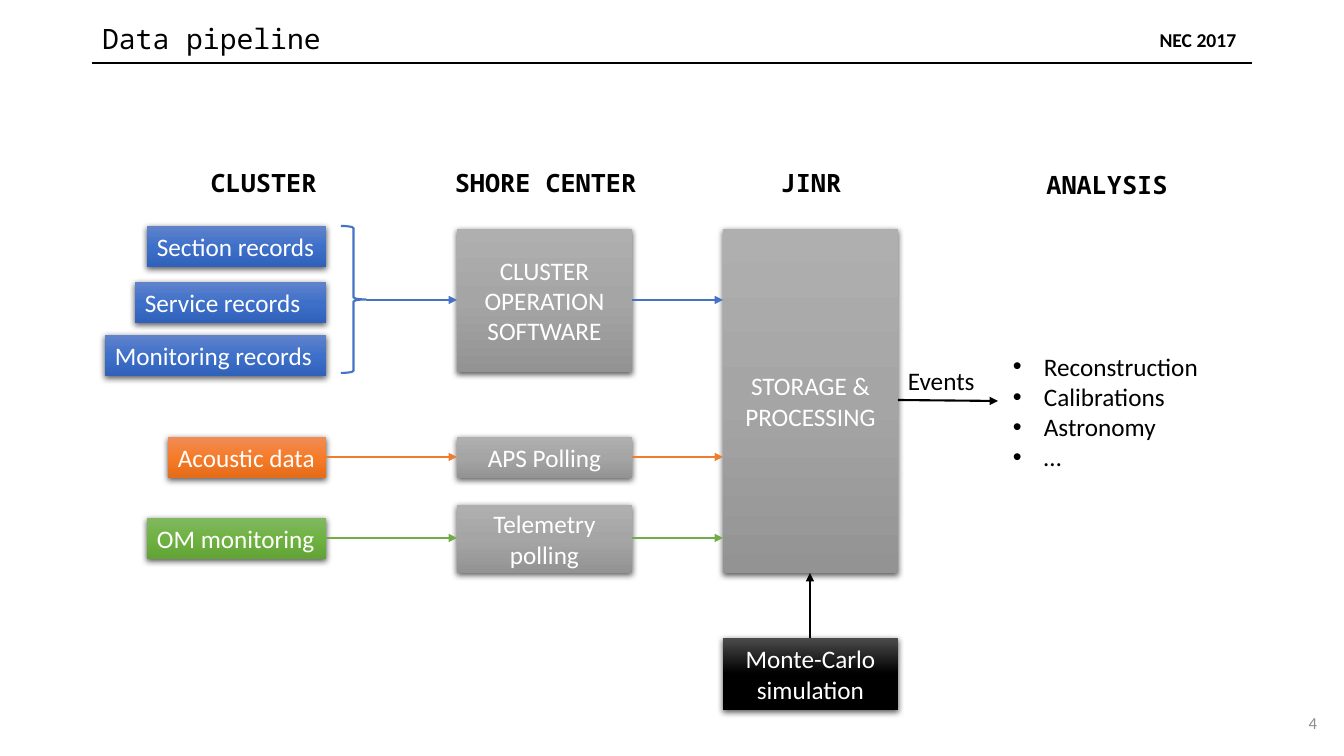
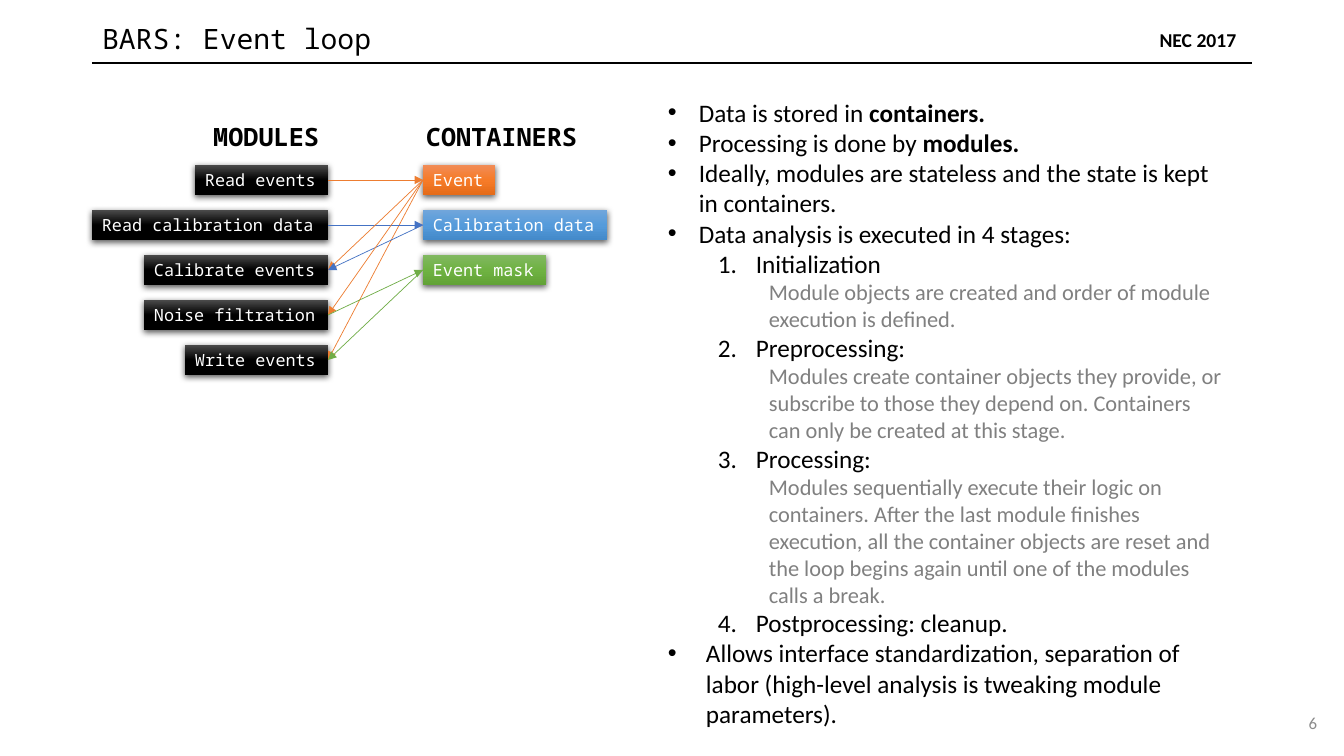
"""Build two slides on a data pipeline and its event loop."""
from pptx import Presentation
from pptx import util as u
from pptx.dml.color import RGBColor
from pptx.enum import shapes, text
from pptx.oxml import parse_xml
from pptx.oxml.ns import nsdecls, qn

PX = 12192000 / 1344
BODY, MONO = "Calibri", "Noto Sans Mono"
BLACK = RGBColor(0x00, 0x00, 0x00)
WHITE = RGBColor(0xFF, 0xFF, 0xFF)
GRAY = RGBColor(0x80, 0x80, 0x80)
NUMBER_GRAY = RGBColor(0x8C, 0x8C, 0x8C)
BLUE = RGBColor(0x44, 0x72, 0xC4)
ORANGE = RGBColor(0xED, 0x7D, 0x31)
GREEN = RGBColor(0x70, 0xAD, 0x47)
BLUE_FADE = [RGBColor(0x61, 0x83, 0xCB), RGBColor(0x3E, 0x70, 0xCA), RGBColor(0x30, 0x62, 0xBB)]
SKY_FADE = [RGBColor(0x71, 0xA6, 0xDB), RGBColor(0x55, 0x9B, 0xDB), RGBColor(0x44, 0x8A, 0xCA)]
ORANGE_FADE = [RGBColor(0xF1, 0x8C, 0x57), RGBColor(0xF6, 0x7B, 0x28), RGBColor(0xE5, 0x6C, 0x19)]
GREEN_FADE = [RGBColor(0x81, 0xB8, 0x61), RGBColor(0x6F, 0xB2, 0x42), RGBColor(0x62, 0xA3, 0x36)]
GRAY_FADE = [RGBColor(0xAF, 0xAF, 0xAF), RGBColor(0xA5, 0xA5, 0xA5), RGBColor(0x93, 0x93, 0x93)]
BLACK_FADE = [RGBColor(0x4B, 0x4B, 0x4B), BLACK, BLACK]
LEFT, CENTER, RIGHT = text.PP_ALIGN.LEFT, text.PP_ALIGN.CENTER, text.PP_ALIGN.RIGHT


def add_box(page, frame, words, size=18, font=BODY, color=None, fade=None,
            align=LEFT, wrap=False, bold=False):
    place = [u.Emu(round(length * PX)) for length in frame]
    if fade:
        box = page.shapes.add_shape(shapes.MSO_SHAPE.RECTANGLE, *place)
        stops = "".join(f'<a:gs pos="{i * 50000}"><a:srgbClr val="{stop}"/></a:gs>'
                        for i, stop in enumerate(fade))
        looks = parse_xml(
            f'<a:looks {nsdecls("a")}><a:gradFill><a:gsLst>{stops}</a:gsLst>'
            '<a:lin ang="5400000" scaled="0"/></a:gradFill><a:ln><a:noFill/></a:ln>'
            '<a:effectLst><a:outerShdw blurRad="57150" dist="19050" dir="5400000" algn="ctr" '
            'rotWithShape="0"><a:srgbClr val="000000"><a:alpha val="63000"/></a:srgbClr>'
            '</a:outerShdw></a:effectLst></a:looks>')
        box._element.spPr.extend(list(looks))
    else:
        box = page.shapes.add_textbox(*place)
    box.text_frame.text = words
    box.text_frame.word_wrap = wrap
    box.text_frame.vertical_anchor = text.MSO_ANCHOR.MIDDLE
    for para in box.text_frame.paragraphs:
        para.alignment = align
        for span in para.runs:
            span.font.size = u.Pt(size)
            span.font.name = font
            span.font.bold = bold
            span.font.color.rgb = color or (WHITE if fade else BLACK)
    return box


def add_line(page, start, end, color, width=1.5, arrow=True):
    ends = [u.Emu(round(length * PX)) for length in (*start, *end)]
    line = page.shapes.add_connector(shapes.MSO_CONNECTOR.STRAIGHT, *ends)
    line.line.color.rgb = color
    line.line.width = u.Pt(width)
    if arrow:
        stroke = line._element.spPr.find(qn("a:ln"))
        stroke.append(parse_xml(f'<a:tailEnd {nsdecls("a")} type="triangle"/>'))
    line._element.spPr.append(parse_xml(f'<a:effectLst {nsdecls("a")}/>'))
    return line


deck = Presentation()
deck.slide_width, deck.slide_height = u.Emu(round(1344 * PX)), u.Emu(round(756 * PX))

pages = []
for heading, width, number in [("Data pipeline", 580, "4"), ("BARS: Event loop", 1039, "6")]:
    page = deck.slides.add_slide(deck.slide_layouts[5])
    pages.append(page)
    add_line(page, (92, 63), (1252, 63), BLACK, 1.25, arrow=False)
    title = page.shapes.title
    title.left, title.top, title.width, title.height = [
        u.Emu(round(length * PX)) for length in (92, 17, width, 46)]
    title.text_frame.text = heading
    title.text_frame.auto_size = text.MSO_AUTO_SIZE.NONE
    title.text_frame.vertical_anchor = text.MSO_ANCHOR.MIDDLE
    para = title.text_frame.paragraphs[0]
    para.alignment, para.line_spacing = LEFT, 0.9
    font = para.runs[0].font
    font.size, font.name, font.color.rgb = u.Pt(20), MONO, BLACK
    add_box(page, (1145, 17, 106, 46), "NEC 2017", 14, align=CENTER, bold=True)
    add_box(page, (1274, 703, 53, 40), number, 12, color=NUMBER_GRAY, align=RIGHT, wrap=True)
pipeline, event_loop = pages

for left, top, width, words in [
    (200, 162, 127, "CLUSTER"),
    (444, 162, 203, "SHORE CENTER"),
    (770, 162, 82, "JINR"),
    (1036, 164, 142, "ANALYSIS"),
]:
    add_box(pipeline, (left, top, width, 41), words, font=MONO, align=CENTER, bold=True)

for top, width, words, fade, wrap in [
    (226, 179, "Section records", BLUE_FADE, False),
    (282, 191, "Service records", BLUE_FADE, True),
    (335, 221, "Monitoring records", BLUE_FADE, True),
    (437, 158, "Acoustic data", ORANGE_FADE, False),
    (518, 179, "OM monitoring", GREEN_FADE, False),
]:
    add_box(pipeline, (326 - width, top, width, 41), words, fade=fade, wrap=wrap)

for left, top, height, words, fade in [
    (457, 229, 143, "CLUSTER\nOPERATION\nSOFTWARE", GRAY_FADE),
    (457, 437, 41, "APS Polling", GRAY_FADE),
    (457, 505, 68, "Telemetry polling", GRAY_FADE),
    (723, 229, 344, "STORAGE &\nPROCESSING", GRAY_FADE),
    (723, 638, 72, "Monte-Carlo simulation", BLACK_FADE),
]:
    add_box(pipeline, (left, top, 175, height), words, fade=fade, align=CENTER, wrap=True)

brace = pipeline.shapes.add_shape(
    shapes.MSO_SHAPE.RIGHT_BRACE,
    *[u.Emu(round(length * PX)) for length in (341, 226, 25, 147)])
brace.shadow.inherit = False
brace.fill.background()
brace.line.color.rgb = BLUE
brace.line.width = u.Pt(1.5)

for start, y, color in [(366, 300, BLUE), (326, 457, ORANGE), (326, 538, GREEN)]:
    add_line(pipeline, (start, y), (457, y), color)
    add_line(pipeline, (632, y), (723, y), color)
add_line(pipeline, (810, 638), (810, 573), BLACK)
add_line(pipeline, (898, 400), (998, 401), BLACK)
add_box(pipeline, (898, 360, 88, 41), "Events")

ROW_TOP, ROW_STEP, ROW_HEIGHT = 165, 45, 30
MODULE_RIGHT, CONTAINER_LEFT = 328, 423
add_box(event_loop, (202, 116, 127, 41), "MODULES", font=MONO, align=RIGHT, bold=True)
add_box(event_loop, (416, 116, 172, 41), "CONTAINERS", font=MONO, bold=True)

modules = [
    add_box(event_loop, (MODULE_RIGHT - width, ROW_TOP + row * ROW_STEP, width, ROW_HEIGHT),
            words, 12, MONO, fade=BLACK_FADE)
    for row, (width, words) in enumerate([
        (133, "Read events"),
        (236, "Read calibration data"),
        (184, "Calibrate events"),
        (184, "Noise filtration"),
        (143, "Write events"),
    ])]
containers = [
    add_box(event_loop, (CONTAINER_LEFT, ROW_TOP + row * ROW_STEP, width, ROW_HEIGHT),
            words, 12, MONO, fade=fade)
    for row, (width, words, fade) in enumerate([
        (72, "Event", ORANGE_FADE),
        (184, "Calibration data", SKY_FADE),
        (123, "Event mask", GREEN_FADE),
    ])]

for module, container, color, writes in [
    (0, 0, ORANGE, True),
    (4, 0, ORANGE, False),
    (1, 1, BLUE, True),
    (2, 0, ORANGE, False),
    (2, 1, BLUE, False),
    (3, 0, ORANGE, False),
    (4, 2, GREEN, False),
    (3, 2, GREEN, True),
]:
    middle = ROW_TOP + ROW_HEIGHT // 2
    ends = [((MODULE_RIGHT, middle + module * ROW_STEP), modules[module], 3),
            ((CONTAINER_LEFT, middle + container * ROW_STEP), containers[container], 1)]
    source, target = ends if writes else ends[::-1]
    link = add_line(event_loop, source[0], target[0], color, 0.5)
    link.begin_connect(*source[1:])
    link.end_connect(*target[1:])

DOT = '<a:buFont {0} typeface="Arial"/>', '<a:buChar {0} char="•"/>'
STEP = '<a:buFont {0} typeface="+mj-lt"/>', '<a:buAutoNum {0} type="arabicPeriod"/>'
STYLES = {
    "point": (0, 31, -31, 18, BLACK, DOT),
    "wide point": (0, 38, -38, 18, BLACK, DOT),
    "step": (1, 88, -38, 18, BLACK, STEP),
    "detail": (2, 101, 0, 16, GRAY, ('<a:buNone {0}/>',)),
}
analyses = [("point", words, "") for words in
            ("Reconstruction", "Calibrations", "Astronomy", "…")]
notions = [
    ("point", "Data is stored in ", "containers."),
    ("point", "Processing is done by ", "modules."),
    ("point", "Ideally, modules are stateless and the state is kept in containers.", ""),
    ("point", "Data analysis is executed in 4 stages:", ""),
    ("step", "Initialization", ""),
    ("detail", "Module objects are created and order of module execution is defined.", ""),
    ("step", "Preprocessing:", ""),
    ("detail", "Modules create container objects they provide, or subscribe to those they "
     "depend on. Containers can only be created at this stage.", ""),
    ("step", "Processing:", ""),
    ("detail", "Modules sequentially execute their logic on containers. After the last module "
     "finishes execution, all the container objects are reset and the loop begins again until "
     "one of the modules calls a break.", ""),
    ("step", "Postprocessing: cleanup.", ""),
    ("wide point", "Allows interface standardization, separation of labor (high-level analysis "
     "is tweaking module parameters).", ""),
]
for page, frame, items in [
    (pipeline, (1003, 346, 208, 132), analyses),
    (event_loop, (658, 92, 577, 645), notions),
]:
    box = add_box(page, frame, "\n".join(words for _, words, _ in items), wrap=True)
    box.text_frame.vertical_anchor = text.MSO_ANCHOR.TOP
    for para, (style, _, strong) in zip(box.text_frame.paragraphs, items):
        level, margin, indent, size, color, bullet = STYLES[style]
        para.level = level
        props = para._p.get_or_add_pPr()
        props.set("marL", str(round(margin * PX)))
        props.set("indent", str(round(indent * PX)))
        for tag in bullet:
            props.append(parse_xml(tag.format(nsdecls("a"))))
        if strong:
            span = para.add_run()
            span.text = strong
            span.font.name, span.font.bold = BODY, True
        for span in para.runs:
            span.font.size = u.Pt(size)
            span.font.color.rgb = color

deck.save("out.pptx")
